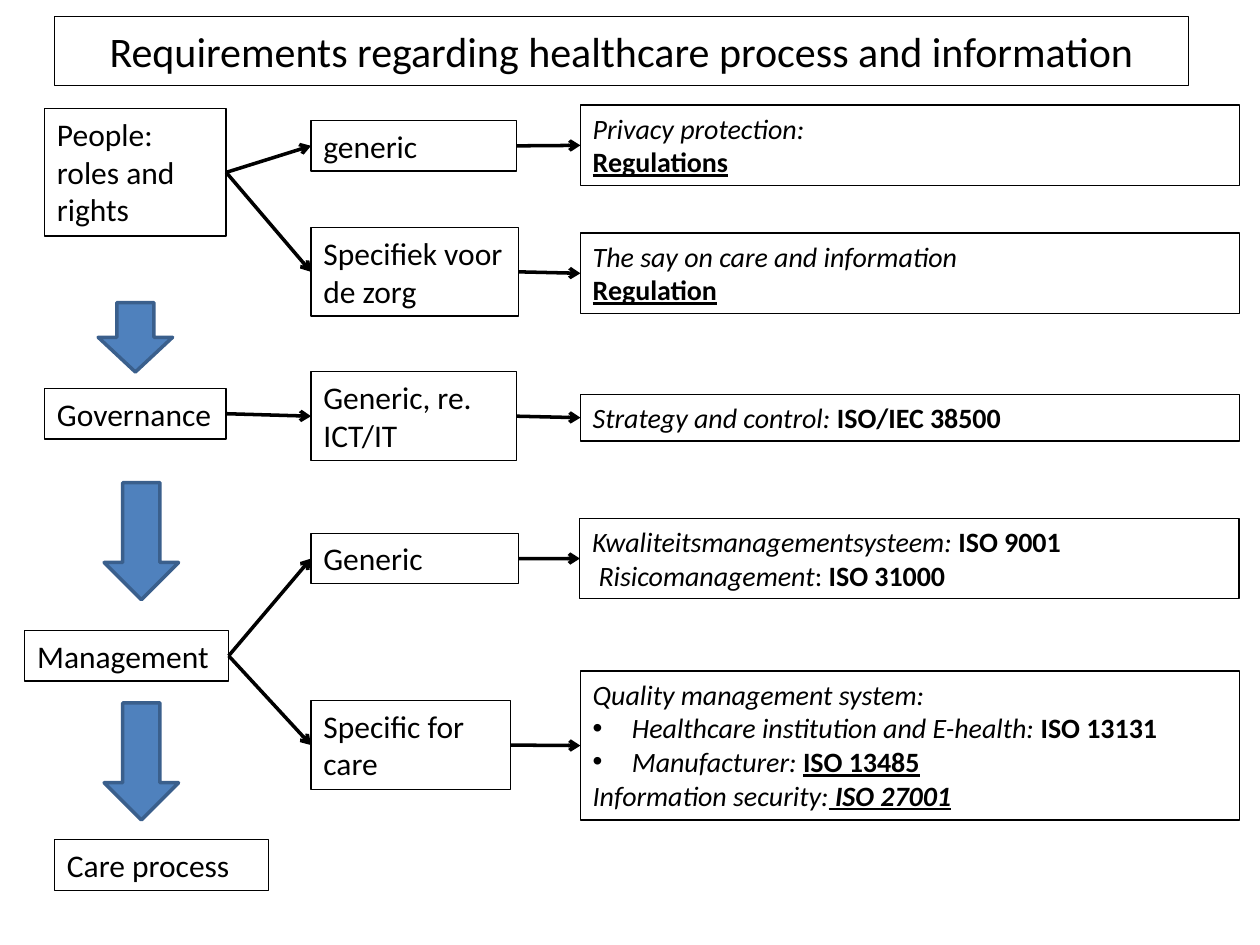
"""Build the slide on requirements for healthcare process and information."""
from dataclasses import dataclass
from typing import NamedTuple

from lxml import etree
from pptx import Presentation
from pptx.dml.color import RGBColor
from pptx.enum.shapes import MSO_CONNECTOR, MSO_SHAPE
from pptx.enum.text import MSO_ANCHOR, MSO_AUTO_SIZE, PP_ALIGN
from pptx.oxml.ns import qn
from pptx.util import Cm, Pt

STRAIGHT = MSO_CONNECTOR.STRAIGHT
DOWN_ARROW = MSO_SHAPE.DOWN_ARROW
MIDDLE = MSO_ANCHOR.MIDDLE
GROW, FIXED = MSO_AUTO_SIZE.SHAPE_TO_FIT_TEXT, MSO_AUTO_SIZE.NONE
CENTER = PP_ALIGN.CENTER
LEFT_SITE, RIGHT_SITE = 1, 3
BLACK, BLUE, DARK_BLUE = "000000", "4F81BD", "3A5F8C"
FONT = "Calibri"
LABEL_SIZE, DETAIL_SIZE, TITLE_SIZE = 18, 16, 24
LABEL_LEFT, DETAIL_LEFT, DETAIL_WIDTH = 6.27, 11.7, 13.29
BULLET_INDENT = 0.79


class Span(NamedTuple):
    text: str
    style: str = ""


class Line(NamedTuple):
    spans: list[Span]
    bullet: bool = False


@dataclass
class Box:
    key: str
    left: float
    top: float
    width: float
    height: float
    lines: list[Line]
    size: int = LABEL_SIZE


class DownArrow(NamedTuple):
    left: float
    top: float
    height: float


def label(key: str, left: float, top: float, width: float, height: float, text: str) -> Box:
    """Describe a box with one plain text."""
    return Box(key, left, top, width, height, [Line([Span(text)])])


def detail(key: str, top: float, height: float, *lines: Line, left: float = DETAIL_LEFT) -> Box:
    """Describe a box in the right column."""
    return Box(key, left, top, DETAIL_WIDTH, height, list(lines), DETAIL_SIZE)


def line(*spans: tuple[str, str], bullet: bool = False) -> Line:
    """Describe a paragraph from pairs of text and style letters."""
    return Line([Span(*span) for span in spans], bullet)


BOXES = [
    label("people", 0.9, 2.19, 3.66, 2.57, "People: roles and rights"),
    label("governance", 0.9, 7.83, 3.66, 1.02, "Governance"),
    label("management", 0.5, 12.71, 4.11, 1.02, "Management"),
    label("care process", 1.1, 16.93, 4.32, 1.02, "Care process"),
    label("people generic", LABEL_LEFT, 2.43, 4.15, 1.02, "generic"),
    label("people specific", LABEL_LEFT, 4.59, 4.19, 1.78, "Specifiek voor de zorg"),
    label("governance generic", LABEL_LEFT, 7.49, 4.15, 1.8, "Generic, re. ICT/IT"),
    label("management generic", LABEL_LEFT, 10.75, 4.19, 1.02, "Generic"),
    label("management specific", LABEL_LEFT, 14.12, 4.03, 1.8, "Specific for care"),
    detail("privacy", 2.12, 1.62,
           line(("Privacy protection:", "i")), line(("Regulations", "bu"))),
    detail("say", 4.7, 1.62,
           line(("The say on care and information", "i")), line(("Regulation", "bu"))),
    detail("strategy", 7.95, 0.94,
           line(("Strategy and control: ", "i"), ("ISO/IEC 38500", "b"))),
    detail("quality and risk", 10.45, 1.62,
           line(("Kwaliteitsmanagementsysteem: ", "i"), ("ISO 9001", "b")),
           line((" Risicomanagement", "i"), (": ", ""), ("ISO 31000", "b")),
           left=11.69),
    detail("quality and security", 13.53, 3,
           line(("Quality management system:", "i")),
           line(("Healthcare institution and E-health: ", "i"), ("ISO 13131", "b"), bullet=True),
           line(("Manufacturer: ", "i"), ("ISO 13485", "bu"), bullet=True),
           line(("Information security:", "i"), (" ISO 27001", "biu"))),
]

LINKS = [
    ("people", "people generic"),
    ("people", "people specific"),
    ("people generic", "privacy"),
    ("people specific", "say"),
    ("governance", "governance generic"),
    ("governance generic", "strategy"),
    ("management", "management generic"),
    ("management", "management specific"),
    ("management generic", "quality and risk"),
    ("management specific", "quality and security"),
]

DOWN_ARROWS = [
    DownArrow(1.98, 6.1, 1.4),
    DownArrow(2.1, 9.73, 2.36),
    DownArrow(2.1, 14.17, 2.36),
]


def color(value: str) -> RGBColor:
    """Turn a hex string into a colour."""
    return RGBColor.from_string(value)


def outline(shape, value: str, width: float) -> None:
    """Give a shape or connector a solid line."""
    shape.line.color.rgb = color(value)
    shape.line.width = Pt(width)


def write(paragraph, text: str, *, size: int, style: str = "") -> None:
    """Add a formatted run, with b, i and u in style for bold, italic and underline."""
    run = paragraph.add_run()
    run.text = text
    font = run.font
    font.name, font.size = FONT, Pt(size)
    font.color.rgb = color(BLACK)
    font.bold, font.italic, font.underline = (letter in style for letter in "biu")


def add_bullet(paragraph) -> None:
    """Give a paragraph a hanging bullet."""
    properties = paragraph._p.get_or_add_pPr()
    properties.set("marL", str(Cm(BULLET_INDENT)))
    properties.set("indent", str(-Cm(BULLET_INDENT)))
    etree.SubElement(properties, qn("a:buFont")).set("typeface", "Arial")
    etree.SubElement(properties, qn("a:buChar")).set("char", "•")


def draw_title(page, text: str) -> None:
    """Fill and place the title placeholder."""
    title = page.shapes.title
    title.left, title.top, title.width, title.height = Cm(1.1), Cm(0.33), Cm(22.86), Cm(1.4)
    outline(title, BLACK, 0.75)
    frame = title.text_frame
    frame.auto_size, frame.vertical_anchor = FIXED, MIDDLE
    frame.paragraphs[0].alignment = CENTER
    write(frame.paragraphs[0], text, size=TITLE_SIZE)


def draw_box(page, box: Box):
    """Draw an outlined text box and return it."""
    shape = page.shapes.add_textbox(Cm(box.left), Cm(box.top), Cm(box.width), Cm(box.height))
    outline(shape, BLACK, 0.75)
    frame = shape.text_frame
    frame.word_wrap, frame.auto_size = True, GROW
    for index, content in enumerate(box.lines):
        paragraph = frame.add_paragraph() if index else frame.paragraphs[0]
        if content.bullet:
            add_bullet(paragraph)
        for span in content.spans:
            write(paragraph, span.text, size=box.size, style=span.style)
    return shape


def draw_link(page, start, end) -> None:
    """Connect the right side of one box to the left side of another."""
    link = page.shapes.add_connector(STRAIGHT, 0, 0, 0, 0)
    link.begin_connect(start, RIGHT_SITE)
    link.end_connect(end, LEFT_SITE)
    outline(link, BLACK, 2)
    etree.SubElement(link.line._get_or_add_ln(), qn("a:tailEnd")).set("type", "arrow")
    etree.SubElement(link._element.spPr, qn("a:effectLst"))


def draw_down_arrow(page, arrow: DownArrow) -> None:
    """Draw a blue block arrow."""
    shape = page.shapes.add_shape(DOWN_ARROW, Cm(arrow.left), Cm(arrow.top), Cm(1.5), Cm(arrow.height))
    shape.shadow.inherit = False
    shape.fill.solid()
    shape.fill.fore_color.rgb = color(BLUE)
    outline(shape, DARK_BLUE, 2)


def main() -> None:
    """Build and save the deck."""
    deck = Presentation()
    deck.slide_width, deck.slide_height = Cm(25.4), Cm(19.05)
    page = deck.slides.add_slide(deck.slide_layouts.get_by_name("Title Only"))
    draw_title(page, "Requirements regarding healthcare process and information")
    shapes = {box.key: draw_box(page, box) for box in BOXES}
    for start, end in LINKS:
        draw_link(page, shapes[start], shapes[end])
    for arrow in DOWN_ARROWS:
        draw_down_arrow(page, arrow)
    deck.save("out.pptx")


if __name__ == "__main__":
    main()
